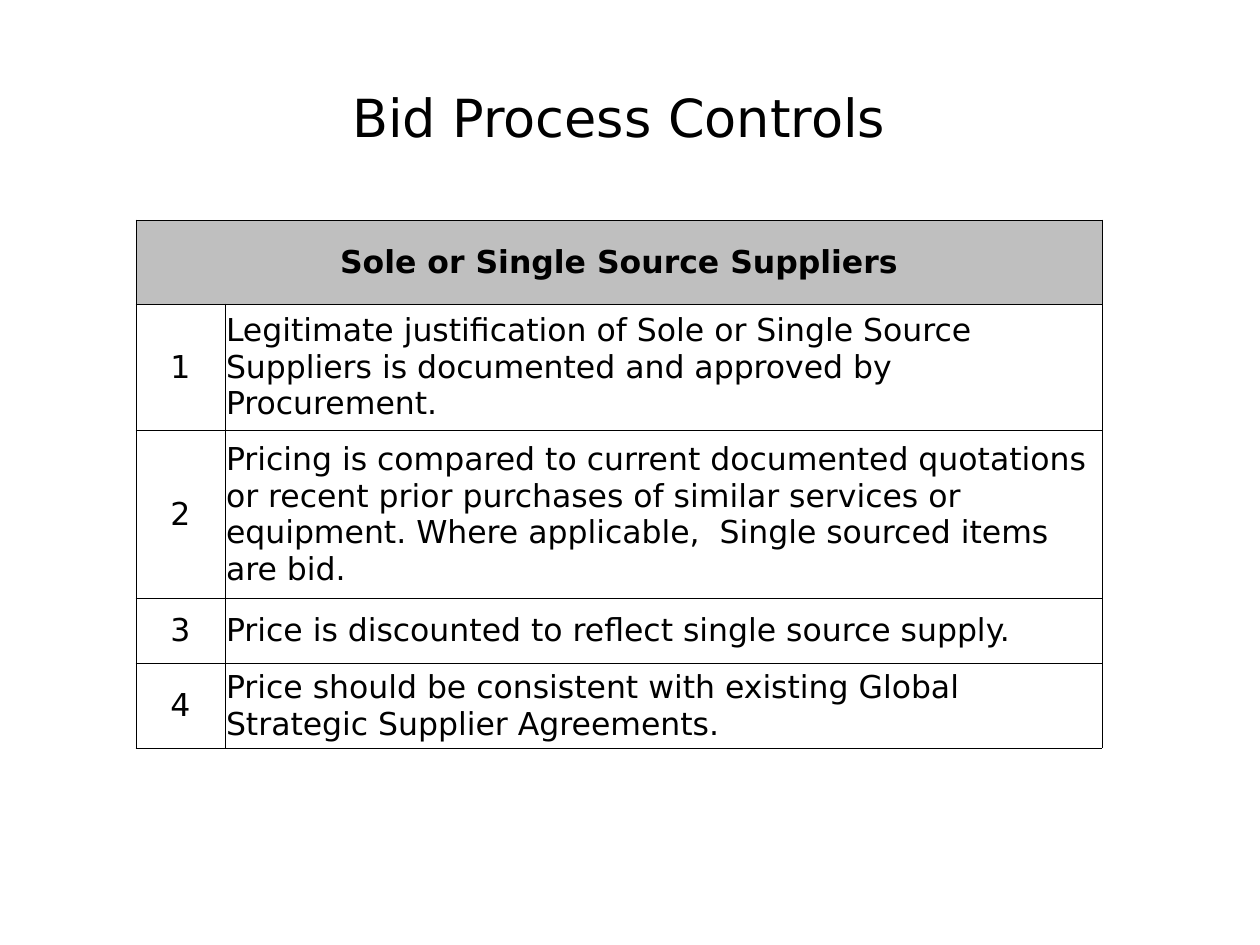
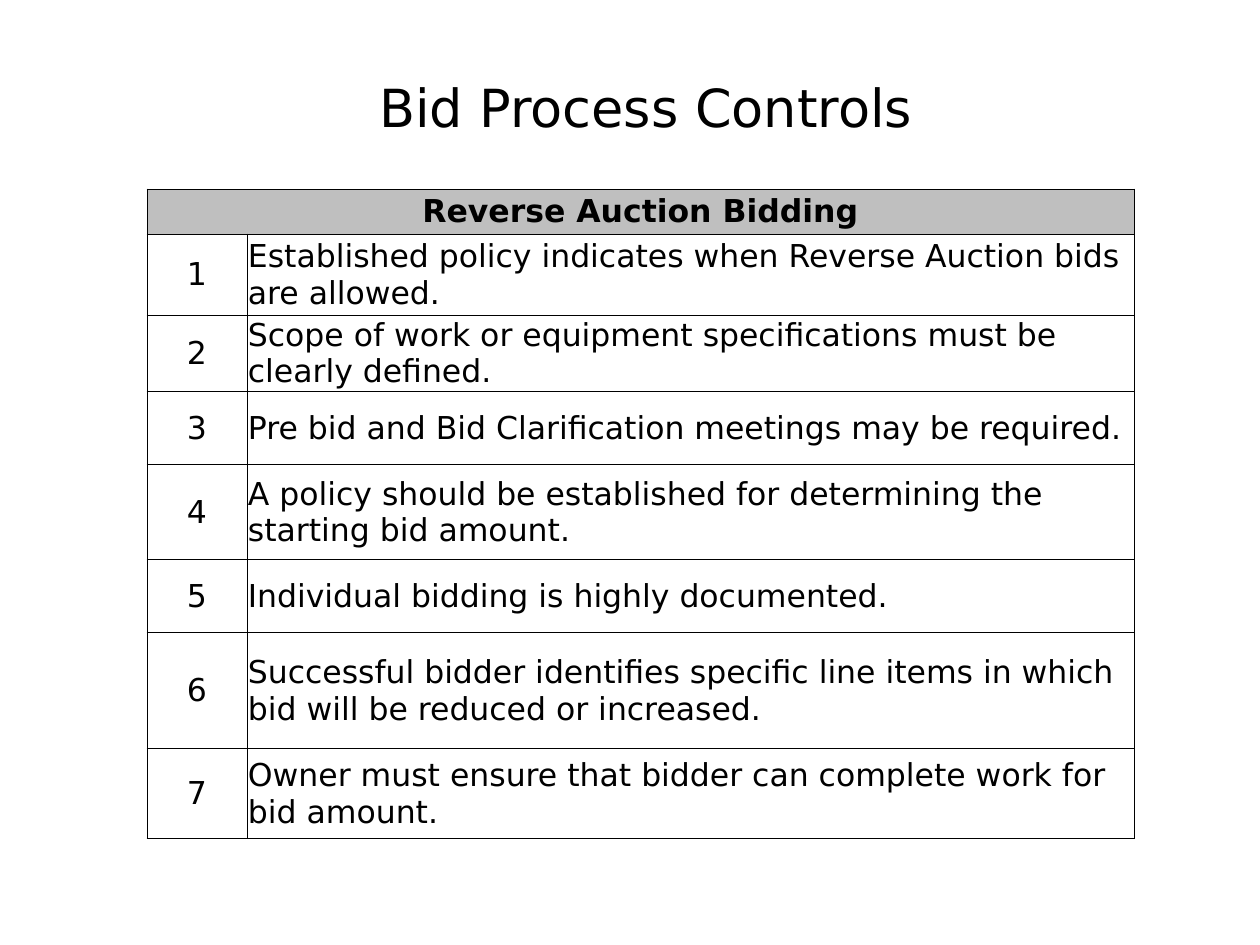
import dataclasses

import pptx
import pptx.dml.color
import pptx.enum.text
import pptx.oxml
import pptx.oxml.ns
import pptx.util

PX_PER_INCH = 126
CENTER = pptx.enum.text.PP_ALIGN.CENTER
LEFT = pptx.enum.text.PP_ALIGN.LEFT
MIDDLE = pptx.enum.text.MSO_ANCHOR.MIDDLE


@dataclasses.dataclass(frozen=True)
class Theme:
    font: str = "DejaVu Sans"
    ink: str = "000000"
    paper: str = "FFFFFF"
    band: str = "BFBFBF"
    title_pt: int = 30
    table_pt: int = 18
    border_pt: float = 0.5


THEME = Theme()

SOLE_SOURCE = [
    "Legitimate justification of Sole or Single Source Suppliers is documented and approved by Procurement.",
    "Pricing is compared to current documented quotations or recent prior purchases of similar services or "
    "equipment. Where applicable,  Single sourced items are bid.",
    "Price is discounted to reflect single source supply.",
    "Price should be consistent with existing Global Strategic Supplier Agreements.",
]

REVERSE_AUCTION = [
    "Established policy indicates when Reverse Auction bids are allowed.",
    "Scope of work or equipment specifications must be clearly defined.",
    "Pre bid and Bid Clarification meetings may be required.",
    "A policy should be established for determining the starting bid amount.",
    "Individual bidding is highly documented.",
    "Successful bidder identifies specific line items in which bid will be reduced or increased.",
    "Owner must ensure that bidder can complete work for bid amount.",
]


def px(n):
    return pptx.util.Inches(n / PX_PER_INCH)


def rgb(color):
    return pptx.dml.color.RGBColor.from_string(color)


def style_paragraph(p, size, align, bold=False):
    p.alignment = align
    p.font.name = THEME.font
    p.font.size = pptx.util.Pt(size)
    p.font.bold = bold
    p.font.color.rgb = rgb(THEME.ink)


def add_title(s, text, left, top, width, height):
    tf = s.shapes.add_textbox(px(left), px(top), px(width), px(height)).text_frame
    tf.word_wrap = True
    tf.vertical_anchor = MIDDLE
    p = tf.paragraphs[0]
    p.text = text
    p.line_spacing = 0.9
    style_paragraph(p, THEME.title_pt, CENTER)


def add_borders(cell):
    tc_pr = cell._tc.get_or_add_tcPr()
    width = pptx.util.Pt(THEME.border_pt)
    for i, side in enumerate(("lnL", "lnR", "lnT", "lnB")):
        tc_pr.insert(i, pptx.oxml.parse_xml(
            f'<a:{side} {pptx.oxml.ns.nsdecls("a")} w="{width}">'
            f'<a:solidFill><a:srgbClr val="{THEME.ink}"/></a:solidFill></a:{side}>'))


def fill_cell(cell, text, align, header=False):
    cell.margin_left = cell.margin_right = cell.margin_top = px(1)
    cell.margin_bottom = 0
    cell.vertical_anchor = MIDDLE
    cell.fill.solid()
    cell.fill.fore_color.rgb = rgb(THEME.band if header else THEME.paper)
    add_borders(cell)
    p = cell.text_frame.paragraphs[0]
    p.text = text
    style_paragraph(p, THEME.table_pt, align, header)


def add_controls_table(s, heading, controls, left, top, col_widths, row_heights):
    table = s.shapes.add_table(
        len(row_heights), len(col_widths), px(left), px(top),
        px(sum(col_widths)), px(sum(row_heights))).table
    table.first_row = table.horz_banding = False
    for col, width in zip(table.columns, col_widths):
        col.width = px(width)
    for row, height in zip(table.rows, row_heights):
        row.height = px(height)
    table.cell(0, 0).merge(table.cell(0, 1))
    fill_cell(table.cell(0, 0), heading, CENTER, header=True)
    add_borders(table.cell(0, 1))
    for i, control in enumerate(controls, 1):
        fill_cell(table.cell(i, 0), str(i), CENTER)
        fill_cell(table.cell(i, 1), control, LEFT)


def add_controls_slide(prs, title_box, heading, controls, **layout):
    s = prs.slides.add_slide(prs.slide_layouts[6])
    add_title(s, "Bid Process Controls", *title_box)
    add_controls_table(s, heading, controls, **layout)


def main():
    prs = pptx.Presentation()
    prs.slide_width, prs.slide_height = px(1260), px(945)
    add_controls_slide(
        prs, (136, 73, 966, 95), "Sole or Single Source Suppliers", SOLE_SOURCE,
        left=136, top=220, col_widths=(89, 877), row_heights=(84, 126, 168, 65, 85))
    add_controls_slide(
        prs, (147, 53, 998, 116), "Reverse Auction Bidding", REVERSE_AUCTION,
        left=147, top=189, col_widths=(100, 887),
        row_heights=(45, 81, 74, 73, 95, 73, 116, 90))
    prs.save("out.pptx")


if __name__ == "__main__":
    main()
